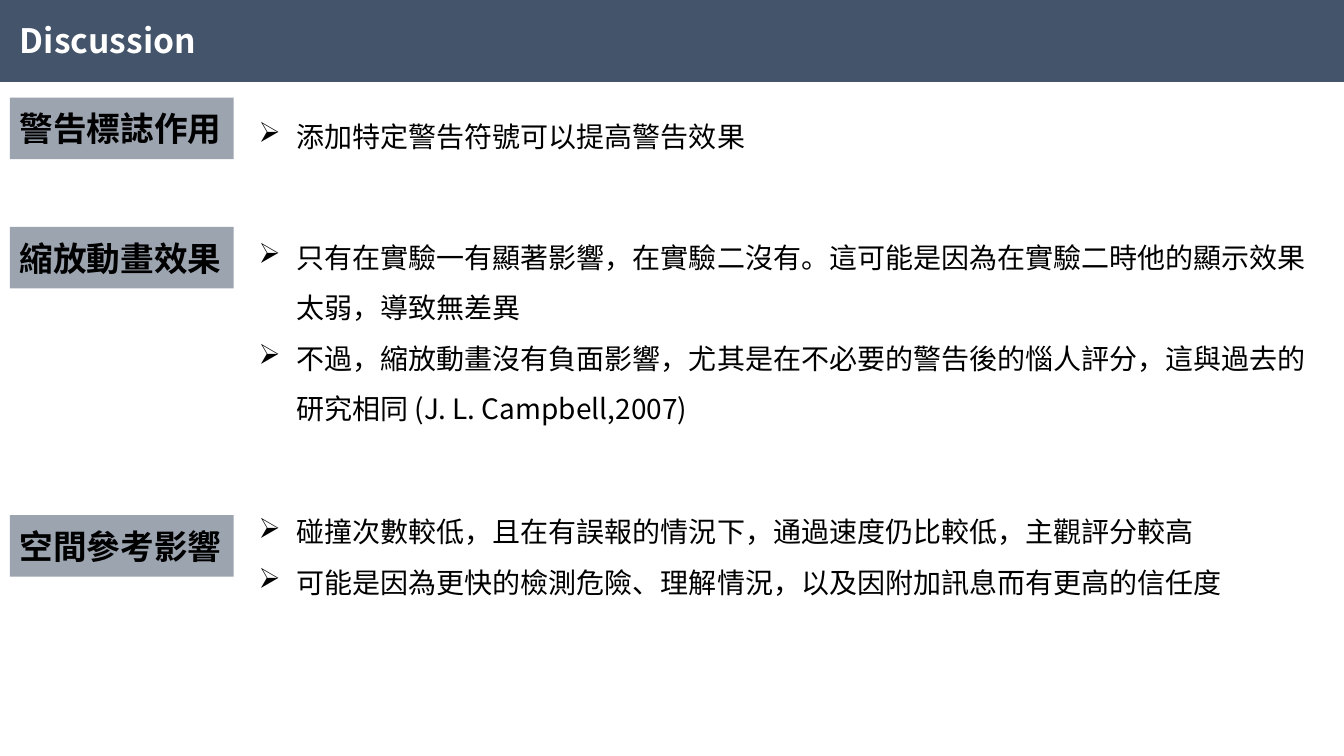
from lxml import etree
from pptx import Presentation
from pptx.dml.color import RGBColor
from pptx.enum.shapes import MSO_SHAPE
from pptx.enum.text import MSO_ANCHOR, PP_ALIGN
from pptx.oxml.ns import qn
from pptx.util import Cm, Pt

RECT = MSO_SHAPE.RECTANGLE
MIDDLE = MSO_ANCHOR.MIDDLE
LEFT = PP_ALIGN.LEFT
FONT = "Noto Sans CJK SC"
SLATE = "44546A"


def paint(target, color):
    """Give a fill a solid colour, or a font its text colour."""
    if hasattr(target, "solid"):
        target.solid()
        target.fore_color.rgb = RGBColor.from_string(color)
    else:
        target.color.rgb = RGBColor.from_string(color)


def style(para, size, color, bold=False):
    """Format the runs, with the font also set for Chinese text."""
    para.alignment = LEFT
    for run in para.runs:
        run.font.name = FONT
        run.font.size = Pt(size)
        run.font.bold = bold
        paint(run.font, color)
        etree.SubElement(run.font._element, qn("a:ea"), typeface=FONT)


# label, label top, body top, body width, body height, points
topics = [
    ("警告標誌作用", 2.46, 2.46, 27.33, 1.4,
     ["添加特定警告符號可以提高警告效果"]),
    ("縮放動畫效果", 5.72, 5.51, 26.92, 5.23,
     ["只有在實驗一有顯著影響，在實驗二沒有。這可能是因為在實驗二時他的顯示效果太弱，導致無差異",
      "不過，縮放動畫沒有負面影響，尤其是在不必要的警告後的惱人評分，這與過去的研究相同 (J. L. Campbell,2007)"]),
    ("空間參考影響", 12.98, 12.42, 27.33, 2.67,
     ["碰撞次數較低，且在有誤報的情況下，通過速度仍比較低，主觀評分較高",
      "可能是因為更快的檢測危險、理解情況，以及因附加訊息而有更高的信任度"]),
]

prs = Presentation()
prs.slide_width = Cm(33.87)
prs.slide_height = Cm(19.05)
slide = prs.slides.add_slide(prs.slide_layouts[5])
shapes = slide.shapes

# Header bar, with the title in front of it
bar = shapes.add_shape(RECT, 0, 0, prs.slide_width, Cm(2.06))
bar.shadow.inherit = False
paint(bar.fill, SLATE)
paint(bar.line.fill, SLATE)
bar.line.width = Pt(1)

title = shapes.title
bar.element.addnext(title.element)
title.left, title.top, title.width, title.height = Cm(0.25), Cm(0.38), Cm(5.08), Cm(1.27)
frame = title.text_frame
frame.text = "Discussion"
frame.word_wrap = False
frame.vertical_anchor = MIDDLE
style(frame.paragraphs[0], 24, "FFFFFF", True)

for name, top, start, width, height, points in topics:
    label = shapes.add_shape(RECT, Cm(0.25), Cm(top), Cm(5.64), Cm(1.55))
    label.shadow.inherit = False
    paint(label.fill, SLATE)
    tint = label.element.spPr.find(".//" + qn("a:srgbClr"))
    etree.SubElement(tint, qn("a:alpha"), val="53000")
    label.line.fill.background()
    frame = label.text_frame
    frame.text = name
    frame.margin_right = 0
    frame.vertical_anchor = MIDDLE
    style(frame.paragraphs[0], 24, "000000", True)

    body = shapes.add_textbox(Cm(6.27), Cm(start), Cm(width), Cm(height))
    frame = body.text_frame
    frame.word_wrap = True
    frame.text = "\n".join(points)
    for para in frame.paragraphs:
        props = para._p.get_or_add_pPr()
        props.set("marL", str(Cm(0.95)))
        props.set("indent", str(-Cm(0.95)))
        etree.SubElement(props, qn("a:buChar"), char="➢")
        para.line_spacing = 1.5
        style(para, 20, "000000")

prs.save("out.pptx")
